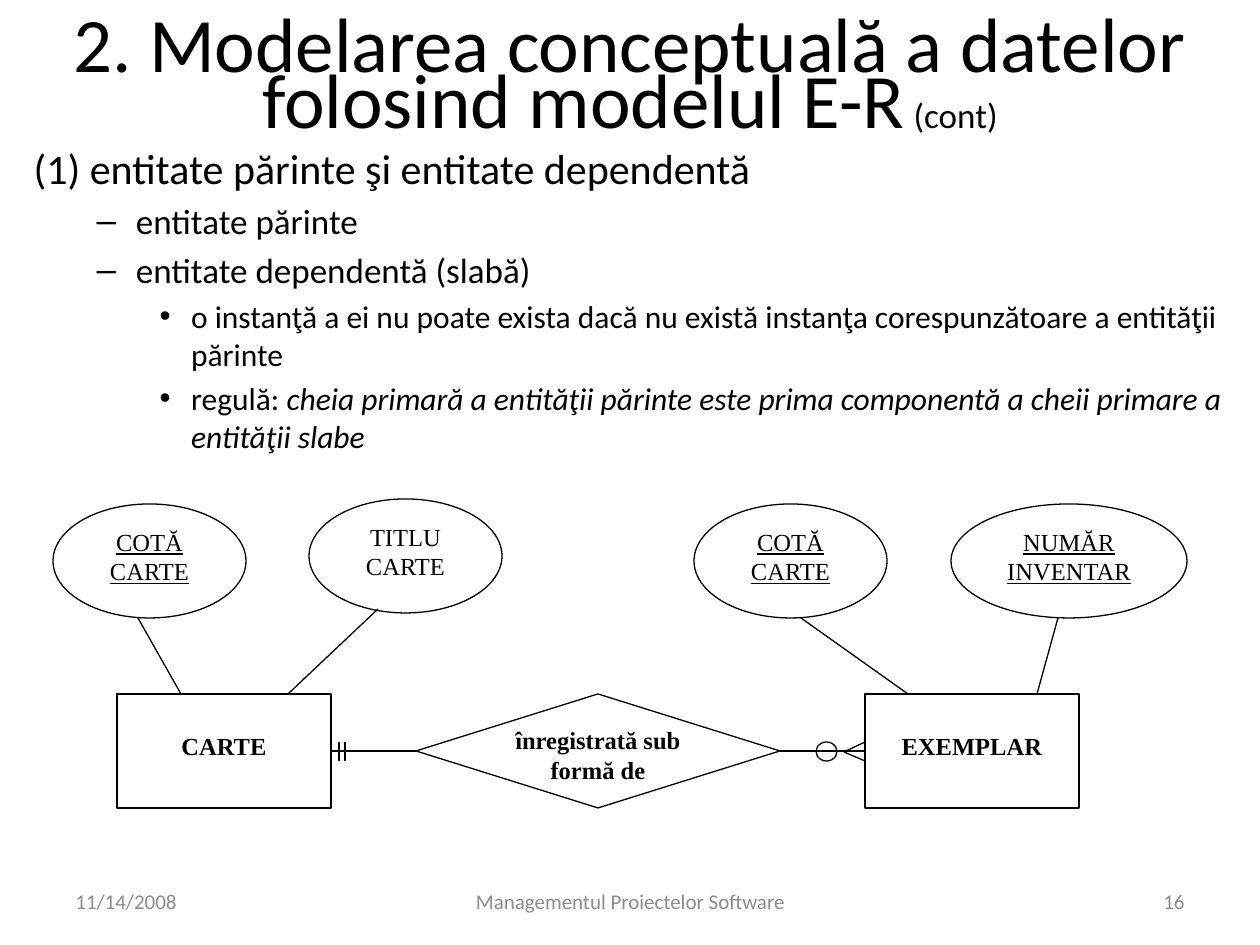
from pptx import Presentation
from pptx.dml.color import RGBColor as Rgb
from pptx.enum.shapes import MSO_CONNECTOR as Link, MSO_SHAPE as Kind
from pptx.enum.text import MSO_ANCHOR as Anchor, MSO_AUTO_SIZE as Auto, PP_ALIGN as Align
from pptx.util import Emu, Pt
from lxml import etree

SCALE = 914400 / 126
HUE = {"ink": "000000", "paper": "FFFFFF", "grey": "8C8C8C"}
NS = "http://schemas.openxmlformats.org/drawingml/2006/main"


def px(*nums):
    return [Emu(round(n * SCALE)) for n in nums]


def write(para, text, hue="ink", **form):
    run = para.add_run()
    run.text = text
    run.font.color.rgb = Rgb.from_string(HUE[hue])
    for key, val in form.items():
        setattr(run.font, key, val)


deck = Presentation()
deck.slide_width, deck.slide_height = px(1260, 945)
slide = deck.slides.add_slide(deck.slide_layouts[1])
items = slide.shapes
title, body = slide.placeholders
for holder, box in ((title, (21, 21, 1218, 126)), (body, (21, 136, 1218, 703))):
    holder.left, holder.top, holder.width, holder.height = px(*box)
    holder.text_frame.auto_size = Auto.NONE

head = title.text_frame.paragraphs[0]
head.line_spacing = 0.6
write(head, "2. Modelarea conceptuală a datelor folosind modelul E-R", size=Pt(44), name="Calibri")
write(head, " (cont)", size=Pt(20), name="Calibri")

points = [
    (0, "(1) entitate părinte şi entitate dependentă", ""),
    (1, "entitate părinte", ""),
    (1, "entitate dependentă (slabă)", ""),
    (2, "o instanţă a ei nu poate exista dacă nu există instanţa corespunzătoare a entităţii părinte", ""),
    (2, "regulă: ", "cheia primară a entităţii părinte este prima componentă a cheii primare a entităţii slabe"),
]
sizes = [24, 20, 18]
frame = body.text_frame
for i, (level, text, rule) in enumerate(points):
    para = frame.add_paragraph() if i else frame.paragraphs[0]
    para.level = level
    write(para, text, size=Pt(sizes[level]), name="Calibri")
    if rule:
        write(para, rule, size=Pt(sizes[level]), name="Calibri", italic=True)
etree.SubElement(frame.paragraphs[0]._p.get_or_add_pPr(), f"{{{NS}}}buNone")

for left, width, text, align in (
    (63, 294, "11/14/2008", Align.LEFT),
    (431, 399, "Managementul Proiectelor Software", Align.CENTER),
    (903, 294, "16", Align.RIGHT),
):
    foot = items.add_textbox(*px(left, 876, width, 50)).text_frame
    foot.word_wrap = True
    foot.vertical_anchor = Anchor.MIDDLE
    foot.paragraphs[0].alignment = align
    write(foot.paragraphs[0], text, "grey", size=Pt(12), name="Calibri")

plain, key, bold = {}, {"underline": True}, {"bold": True}
oval, rect = Kind.OVAL, Kind.RECTANGLE
thin = dict(zip(("margin_left", "margin_top", "margin_right", "margin_bottom"), px(5, 3, 5, 3)))
drop = {"margin_top": px(37)[0]}
nodes = {}
for name, kind, box, lines, form, inset in (
    ("zero", oval, (816, 742, 21, 19), [], plain, {}),
    ("code", oval, (53, 504, 193, 114), ["COTĂ", "CARTE"], key, {}),
    ("name", oval, (309, 499, 193, 114), ["TITLU CARTE"], plain, {}),
    ("copy code", oval, (694, 504, 193, 114), ["COTĂ", "CARTE"], key, {}),
    ("number", oval, (951, 504, 236, 114), ["NUMĂR", "INVENTAR"], key, {}),
    ("book", rect, (117, 694, 214, 114), ["CARTE"], bold, drop),
    ("item", rect, (865, 694, 214, 114), ["EXEMPLAR"], bold, drop),
    ("bond", Kind.DIAMOND, (416, 694, 364, 114), ["înregistrată sub formă de"], bold, thin),
):
    node = nodes[name] = items.add_shape(kind, *px(*box))
    node.shadow.inherit = False
    node.fill.solid()
    node.fill.fore_color.rgb = Rgb.from_string(HUE["paper"])
    node.line.color.rgb = Rgb.from_string(HUE["ink"])
    node.line.width = Pt(0.75)
    frame = node.text_frame
    frame.word_wrap = True
    frame.vertical_anchor = Anchor.TOP
    for side, gap in inset.items():
        setattr(frame, side, gap)
    for i, text in enumerate(lines):
        para = frame.add_paragraph() if i else frame.paragraphs[0]
        para.alignment = Align.CENTER
        write(para, text, size=Pt(14), name="Times New Roman", **form)

for ends, joins in (
    ((416, 751, 331, 751), ("bond", 1, "book", 3)),
    ((780, 751, 865, 751), ("bond", 3, "item", 1)),
    ((339, 742, 339, 761), None),
    ((345, 742, 345, 761), None),
    ((865, 742, 844, 752), None),
    ((844, 752, 865, 761), None),
    ((138, 618, 181, 694), None),
    ((378, 609, 288, 694), None),
    ((801, 618, 908, 694), None),
    ((1058, 618, 1037, 694), None),
):
    line = items.add_connector(Link.STRAIGHT, *px(*ends))
    line.line.color.rgb = Rgb.from_string(HUE["ink"])
    line.line.width = Pt(0.75)
    etree.SubElement(line._element.spPr, f"{{{NS}}}effectLst")
    if joins:
        start, out, stop, into = joins
        line.begin_connect(nodes[start], out)
        line.end_connect(nodes[stop], into)

deck.save("out.pptx")
